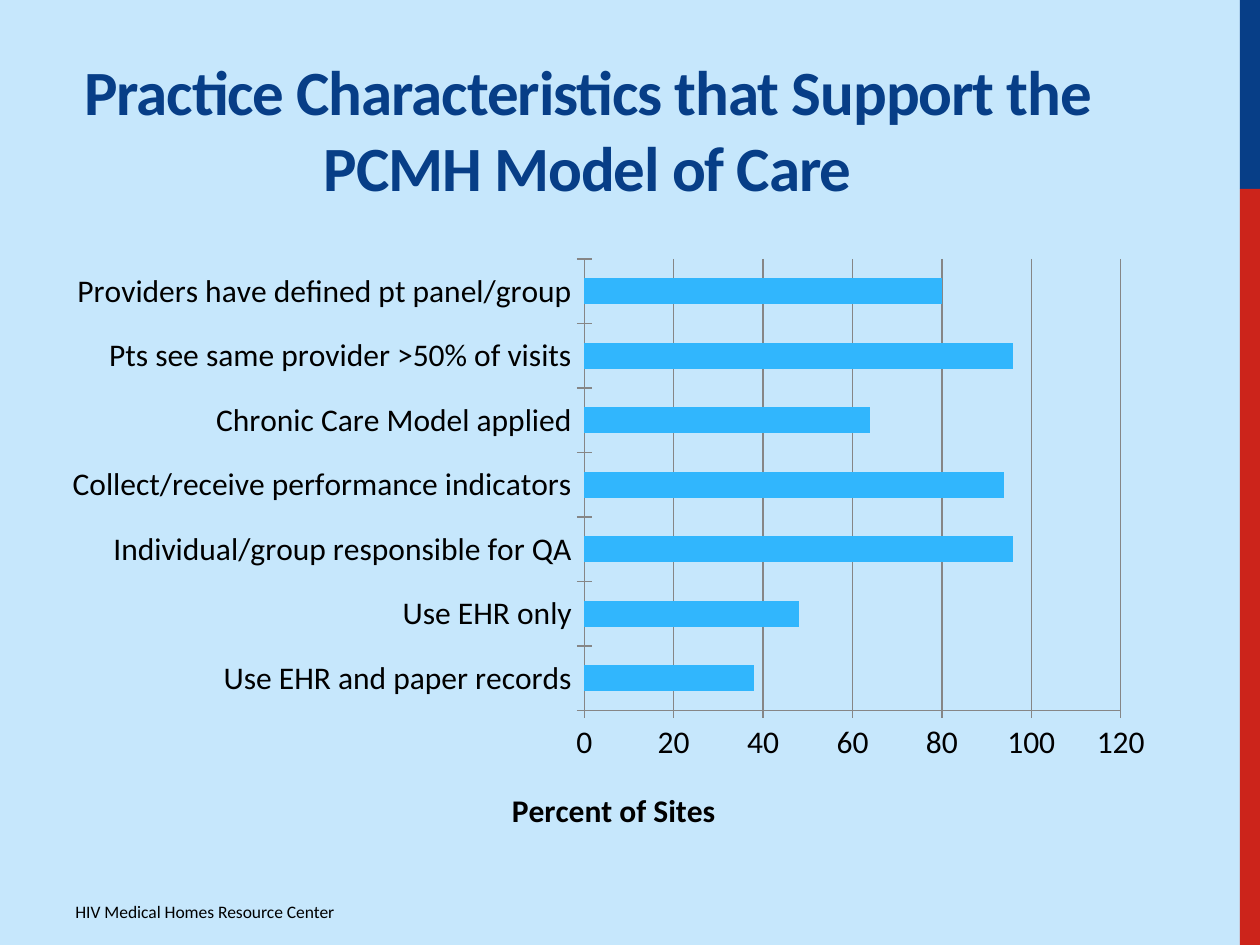
from lxml import etree
from pptx import Presentation
from pptx import util as u
from pptx.chart.data import CategoryChartData
from pptx.dml.color import RGBColor
from pptx.enum import chart as ch, shapes, text
from pptx.oxml import ns

SKY = RGBColor(0xC6, 0xE7, 0xFC)
NAVY = RGBColor(0x07, 0x3E, 0x87)
RED = RGBColor(0xCC, 0x24, 0x1B)
BLUE = RGBColor(0x31, 0xB6, 0xFD)
GREY = RGBColor(0x86, 0x86, 0x86)
BLACK = RGBColor(0, 0, 0)
FONT = "Calibri"


def label(box, words, form, **frame):
    """Add one wrapped line of text; form holds the font values."""
    shape = slide.shapes.add_textbox(*map(u.Inches, box))
    for key, val in dict(frame, word_wrap=True).items():
        setattr(shape.text_frame, key, val)
    para = shape.text_frame.paragraphs[0]
    run = para.add_run()
    run.text = words
    run.font.color.rgb = form.pop("color")
    for key, val in form.items():
        setattr(run.font, key, val)
    return para


def place(node, spot, **share):
    """Put a chart part at shares of the chart's size."""
    old = node.find(ns.qn("c:layout"))
    if old is not None:
        node.remove(old)
    lay = etree.Element(ns.qn("c:layout"))
    man = etree.SubElement(lay, ns.qn("c:manualLayout"))
    if "w" in share:
        etree.SubElement(man, ns.qn("c:layoutTarget"), val="inner")
    for key in "xy":
        etree.SubElement(man, ns.qn(f"c:{key}Mode"), val="edge")
    for key, val in share.items():
        etree.SubElement(man, ns.qn(f"c:{key}"), val=str(val))
    node.insert(spot, lay)


deck = Presentation()
deck.slide_width, deck.slide_height = u.Inches(10), u.Inches(7.5)
slide = deck.slides.add_slide(deck.slide_layouts[6])

# Background panel and side stripe
wide, high = 10, 7.5
edge, cut = 9.84, high / 5
for box, color in [
    ((0, 0, edge, high), SKY),
    ((edge, 0, wide - edge, cut), NAVY),
    ((edge, cut, wide - edge, high - cut), RED),
]:
    panel = slide.shapes.add_shape(shapes.MSO_SHAPE.RECTANGLE, *map(u.Inches, box))
    panel.shadow.inherit = False
    panel.fill.solid()
    panel.fill.fore_color.rgb = color
    panel.line.fill.background()

# Title
title = label(
    (0.5, 0.17, 8.33, 1.5),
    "Practice Characteristics that Support the PCMH Model of Care",
    dict(name=FONT, size=u.Pt(36), bold=True, color=NAVY),
    vertical_anchor=text.MSO_ANCHOR.BOTTOM,
)
title.alignment = text.PP_ALIGN.CENTER
title.runs[0].font._element.set("spc", "-60")

# Footer
label((0.5, 7.1, 3.75, 0.31), "HIV Medical Homes Resource Center",
      dict(name=FONT, size=u.Pt(10), color=BLACK))

# Bar chart, first row at the bottom
rows = {
    "Use EHR and paper records": 38,
    "Use EHR only": 48,
    "Individual/group responsible for QA": 96,
    "Collect/receive performance indicators": 94,
    "Chronic Care Model applied": 64,
    "Pts see same provider >50% of visits": 96,
    "Providers have defined pt panel/group": 80,
}
data = CategoryChartData()
data.categories = list(rows)
data.add_series("Series 1", list(rows.values()))
chart = slide.shapes.add_chart(
    ch.XL_CHART_TYPE.BAR_CLUSTERED,
    *map(u.Inches, (0.38, 1.96, 8.87, 4.78)), data).chart
chart.has_legend = chart.has_title = False
chart.font.name, chart.font.size = FONT, u.Pt(18)
chart.font.color.rgb = BLACK

plot = chart.plots[0]
plot.gap_width, plot.vary_by_categories = 150, False
bars = plot.series[0].format.fill
bars.solid()
bars.fore_color.rgb = BLUE

# Axes
cats, vals = chart.category_axis, chart.value_axis
for axis in (cats, vals):
    axis.major_tick_mark = ch.XL_TICK_MARK.CROSS
    axis.minor_tick_mark = ch.XL_TICK_MARK.NONE
    axis.format.line.color.rgb = GREY
cats.has_major_gridlines = False
for key, val in dict(minimum_scale=0, maximum_scale=120, major_unit=20,
                     has_major_gridlines=True, has_title=True).items():
    setattr(vals, key, val)
vals.major_gridlines.format.line.color.rgb = GREY

name = vals.axis_title.text_frame.paragraphs[0].add_run()
name.text = "Percent of Sites"
for key, val in dict(name=FONT, size=u.Pt(18), bold=True).items():
    setattr(name.font, key, val)
name.font.color.rgb = BLACK

place(plot._element.getparent(), 0, x=0.48, y=0.02, w=0.48, h=0.75)
place(vals.axis_title._element, 1, x=0.41, y=0.89)

deck.save("out.pptx")
